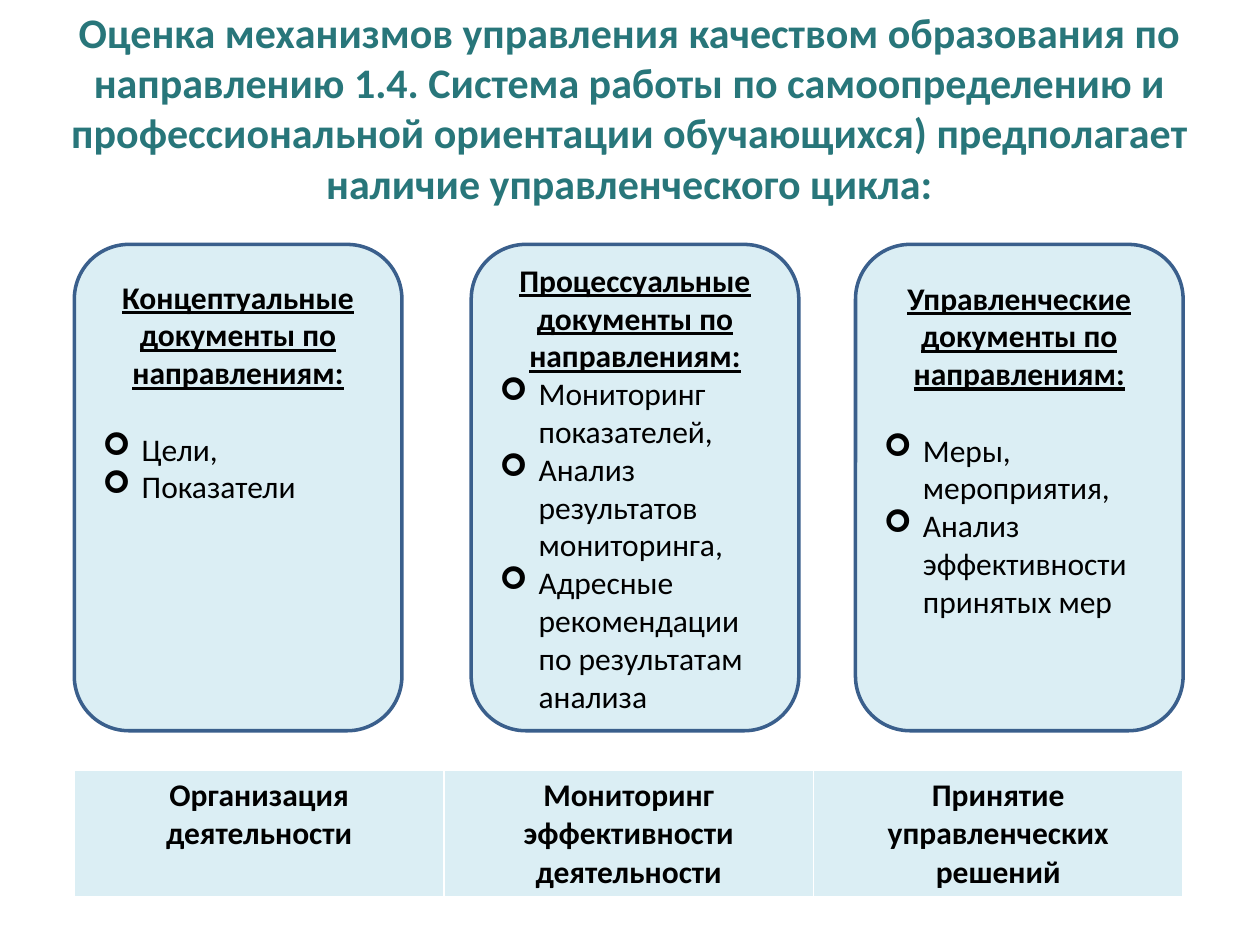
from lxml.etree import SubElement
from pptx import Presentation
from pptx.dml.color import RGBColor
from pptx.enum.shapes import MSO_SHAPE
from pptx.enum.text import MSO_ANCHOR, PP_ALIGN
from pptx.oxml.ns import qn
from pptx.util import Inches, Pt

TITLE = (
    "Оценка механизмов управления качеством образования по направлению 1.4. "
    "Система работы по самоопределению и профессиональной ориентации обучающихся) "
    "предполагает наличие управленческого цикла:"
)
CARDS = [
    (0.59, "Концептуальные документы по направлениям:", 22, 5, ["Цели,", "Показатели"]),
    (3.74, "Процессуальные документы по направлениям:", 0, 0,
     ["Мониторинг показателей,", "Анализ результатов мониторинга,",
      "Адресные рекомендации по результатам анализа"]),
    (6.79, "Управленческие документы по направлениям:", 22, 2,
     ["Меры, мероприятия,", "Анализ эффективности принятых мер"]),
]
STAGES = ["Организация деятельности", "Мониторинг эффективности деятельности",
          "Принятие управленческих решений"]
LINE_HEIGHT = 0.305


def rgb(value):
    return RGBColor.from_string(value)


def write(paragraph, text, size=18, color="000000", bold=False, underline=False,
          align=PP_ALIGN.CENTER, after=0, bullet=None):
    paragraph.alignment = align
    paragraph.space_after = Pt(after)
    run = paragraph.add_run()
    run.text = text
    font = run.font
    font.name, font.size, font.bold, font.underline = "Calibri", Pt(size), bold, underline
    font.color.rgb = rgb(color)
    if bullet:
        properties = paragraph._p.get_or_add_pPr()
        properties.set("marL", str(Inches(0.31)))
        properties.set("indent", str(-Inches(0.31)))
        SubElement(properties, qn("a:buFont"), typeface="Wingdings")
        SubElement(properties, qn("a:buChar"), char=bullet)


class CycleSlide:
    """Draws the management cycle slide in one shared style."""

    fill = "DBEEF4"
    outline = "3A5F8C"
    heading = "28767A"
    border = "FFFFFF"

    def __init__(self, slide):
        self.slide = slide

    def title(self, text, left, top, width, height):
        box = self.slide.shapes.add_textbox(
            Inches(left), Inches(top), Inches(width), Inches(height))
        box.text_frame.word_wrap = True
        write(box.text_frame.paragraphs[0], text, size=24, color=self.heading, bold=True)

    def card(self, left, heading, gap, free_lines, items):
        card = self.slide.shapes.add_shape(
            MSO_SHAPE.ROUNDED_RECTANGLE, Inches(left), Inches(1.94), Inches(2.6), Inches(3.86))
        card.shadow.inherit = False
        card.fill.solid()
        card.fill.fore_color.rgb = rgb(self.fill)
        card.line.color.rgb = rgb(self.outline)
        card.line.width = Pt(2)
        frame = card.text_frame
        frame.word_wrap = True
        frame.vertical_anchor = MSO_ANCHOR.MIDDLE
        frame.margin_bottom = Inches(0.05 + free_lines * LINE_HEIGHT)
        write(frame.paragraphs[0], heading, bold=True, underline=True, after=gap)
        for item in items:
            write(frame.add_paragraph(), item, align=PP_ALIGN.LEFT, bullet="➢")

    def stages(self, labels, left, top, width, height):
        table = self.slide.shapes.add_table(
            1, len(labels), Inches(left), Inches(top), Inches(width), Inches(height)).table
        table.first_row = table.horz_banding = False
        for cell, label in zip(table.rows[0].cells, labels):
            write(cell.text_frame.paragraphs[0], label, bold=True)
            self.borders(cell)
            cell.fill.solid()
            cell.fill.fore_color.rgb = rgb(self.fill)

    def borders(self, cell):
        properties = cell._tc.get_or_add_tcPr()
        for side, points in (("L", 1), ("R", 1), ("T", 1), ("B", 3)):
            edge = SubElement(properties, qn(f"a:ln{side}"), w=str(Pt(points)))
            SubElement(SubElement(edge, qn("a:solidFill")), qn("a:srgbClr"), val=self.border)


def main():
    presentation = Presentation()
    presentation.slide_width, presentation.slide_height = Inches(10), Inches(7.5)
    cycle = CycleSlide(presentation.slides.add_slide(presentation.slide_layouts[6]))
    cycle.title(TITLE, 0.35, 0, 9.29, 7.14)
    for card in CARDS:
        cycle.card(*card)
    cycle.stages(STAGES, 0.59, 6.11, 8.8, 1.02)
    presentation.save("out.pptx")


if __name__ == "__main__":
    main()
